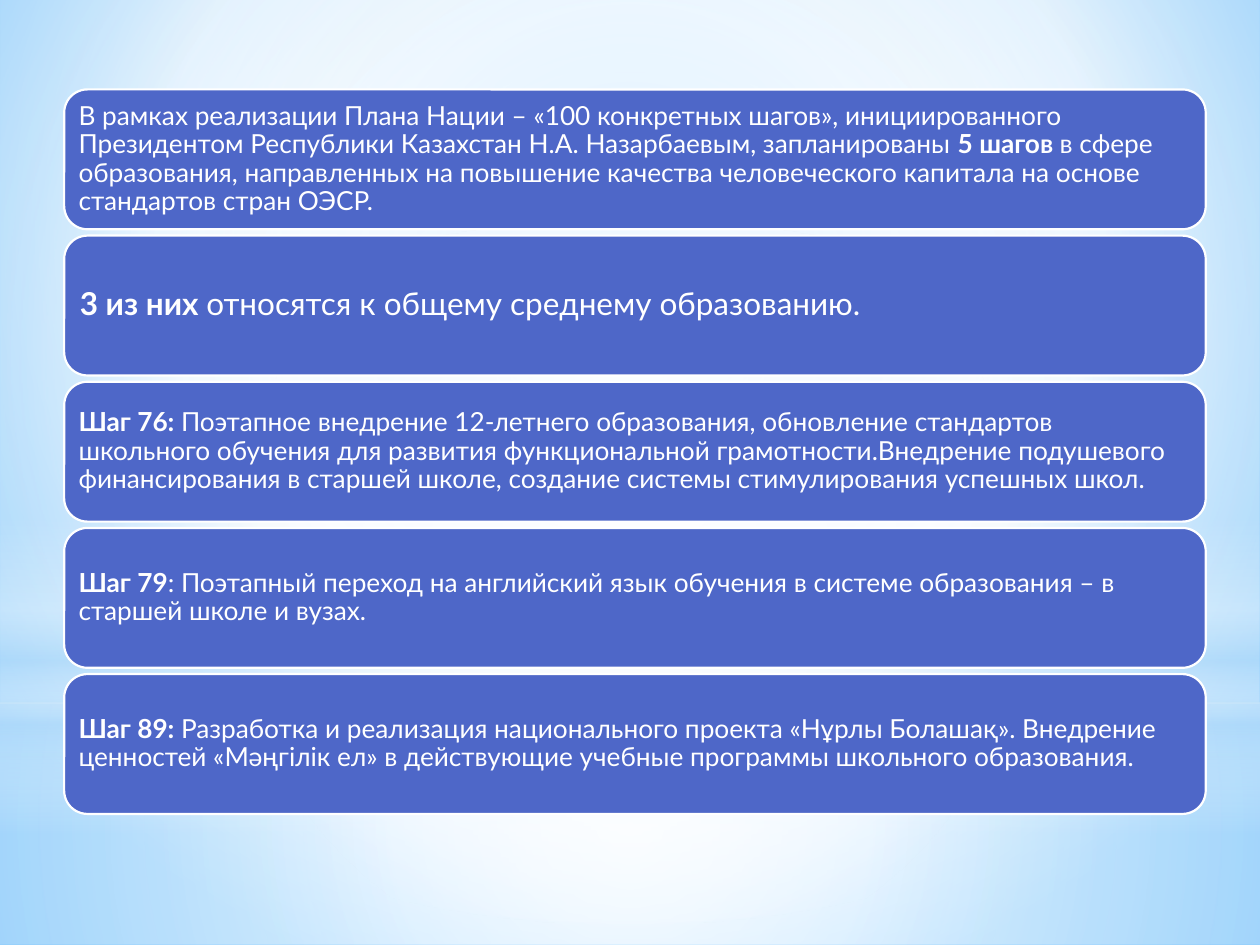
from lxml import etree
from pptx import Presentation
from pptx.dml.color import RGBColor
from pptx.enum.shapes import MSO_SHAPE
from pptx.enum.text import MSO_ANCHOR, PP_ALIGN
from pptx.oxml.ns import qn
from pptx.util import Inches, Pt

RECTANGLE = MSO_SHAPE.RECTANGLE
ROUNDED = MSO_SHAPE.ROUNDED_RECTANGLE
OVAL = MSO_SHAPE.OVAL
MIDDLE = MSO_ANCHOR.MIDDLE
LEFT = PP_ALIGN.LEFT
WHITE, SKY, BLUE = "FFFFFF", "B4DCFA", "4E67C8"


def rgb(hex_string):
    return RGBColor.from_string(hex_string)


def add_run(paragraph, text, size=15, bold=False, color=WHITE, font="Lato"):
    run = paragraph.add_run()
    run.text = text
    run.font.name = font
    run.font.size = Pt(size)
    run.font.bold = bold
    run.font.color.rgb = rgb(color)


presentation = Presentation()
presentation.slide_width = Inches(10)
presentation.slide_height = Inches(7.5)
slide = presentation.slides.add_slide(presentation.slide_layouts[6])

# Gradient layers: stops are (position %, colour, opacity %),
# focus is the left, top, right, bottom of a radial centre, None for vertical
CENTRE = (50, 50, 50, 50)
slide.background.fill.gradient()
gradients = [(
    slide.element.find(".//" + qn("a:gradFill")),
    [(0, "9ED5FF", 100), (60, WHITE, 100), (100, "5BB9FF", 100)],
    (20, 10, 20, 60),
)]
layers = [
    (RECTANGLE, 5.58, 1.92, [(0, WHITE, 91), (37, WHITE, 76), (100, SKY, 79)], CENTRE),
    (RECTANGLE, 0, 5.58, [(0, WHITE, 89), (48, WHITE, 62), (100, SKY, 79)], CENTRE),
    (RECTANGLE, 4.12, 2.5, [(0, WHITE, 0), (29, WHITE, 30), (45, SKY, 40),
                            (55, WHITE, 26), (65, SKY, 60), (100, WHITE, 0)], None),
    (OVAL, 1.75, 5.58, [(0, WHITE, 100), (56, WHITE, 0)], CENTRE),
]
for kind, top, height, stops, focus in layers:
    shape = slide.shapes.add_shape(kind, 0, Inches(top), Inches(10), Inches(height))
    shape.shadow.inherit = False
    shape.line.fill.background()
    shape.fill.gradient()
    gradients.append((shape.element.find(".//" + qn("a:gradFill")), stops, focus))

for gradient, stops, focus in gradients:
    for child in list(gradient):
        gradient.remove(child)
    stop_list = etree.SubElement(gradient, qn("a:gsLst"))
    for position, color, opacity in stops:
        stop = etree.SubElement(stop_list, qn("a:gs"), pos=str(position * 1000))
        color_node = etree.SubElement(stop, qn("a:srgbClr"), val=color)
        if opacity < 100:
            etree.SubElement(color_node, qn("a:alpha"), val=str(opacity * 1000))
    if focus:
        radial = etree.SubElement(gradient, qn("a:path"), path="circle")
        sides = {side: str(value * 1000) for side, value in zip("ltrb", focus)}
        etree.SubElement(radial, qn("a:fillToRect"), **sides)
    else:
        etree.SubElement(gradient, qn("a:lin"), ang="5400000", scaled="0")

# Stacked panels: text size, inset, runs as (text, bold)
panels = [
    (15, 0.06, [
        ("В рамках реализации Плана Нации – «100 конкретных шагов», инициированного "
         "Президентом Республики Казахстан Н.А. Назарбаевым, запланированы ", False),
        ("5 шагов ", True),
        ("в сфере образования, направленных на повышение качества человеческого "
         "капитала на основе стандартов стран ОЭСР.", False)]),
    (18, 0.07, [
        ("3 из них ", True),
        ("относятся к общему среднему образованию.", False)]),
    (15, 0.06, [
        ("Шаг 76: ", True),
        ("Поэтапное внедрение 12-летнего образования, обновление стандартов школьного "
         "обучения для развития функциональной грамотности.Внедрение подушевого "
         "финансирования в старшей школе, создание системы стимулирования успешных "
         "школ.", False)]),
    (15, 0.06, [
        ("Шаг 79", True),
        (": Поэтапный переход на английский язык обучения в системе образования – "
         "в старшей школе и вузах.", False)]),
    (15, 0.06, [
        ("Шаг 89: ", True),
        ("Разработка и реализация национального проекта «Нұрлы Болашақ». Внедрение "
         "ценностей «Мәңгілік ел» в действующие учебные программы школьного "
         "образования.", False)]),
]
PANEL_TOP, PANEL_STEP = 0.71, 1.16
for index, (size, inset, runs) in enumerate(panels):
    panel = slide.shapes.add_shape(
        ROUNDED, Inches(0.51), Inches(PANEL_TOP + index * PANEL_STEP),
        Inches(9.06), Inches(1.11))
    panel.shadow.inherit = False
    panel.fill.solid()
    panel.fill.fore_color.rgb = rgb(BLUE)
    panel.line.color.rgb = rgb(WHITE)
    panel.line.width = Pt(1.25)

    frame = panel.text_frame
    frame.word_wrap = True
    frame.vertical_anchor = MIDDLE
    frame.margin_left = frame.margin_right = Inches(inset)
    frame.margin_top = frame.margin_bottom = Inches(inset)
    paragraph = frame.paragraphs[0]
    paragraph.alignment = LEFT
    paragraph.line_spacing = 0.9
    for text, bold in runs:
        add_run(paragraph, text, size=size, bold=bold)

presentation.save("out.pptx")
